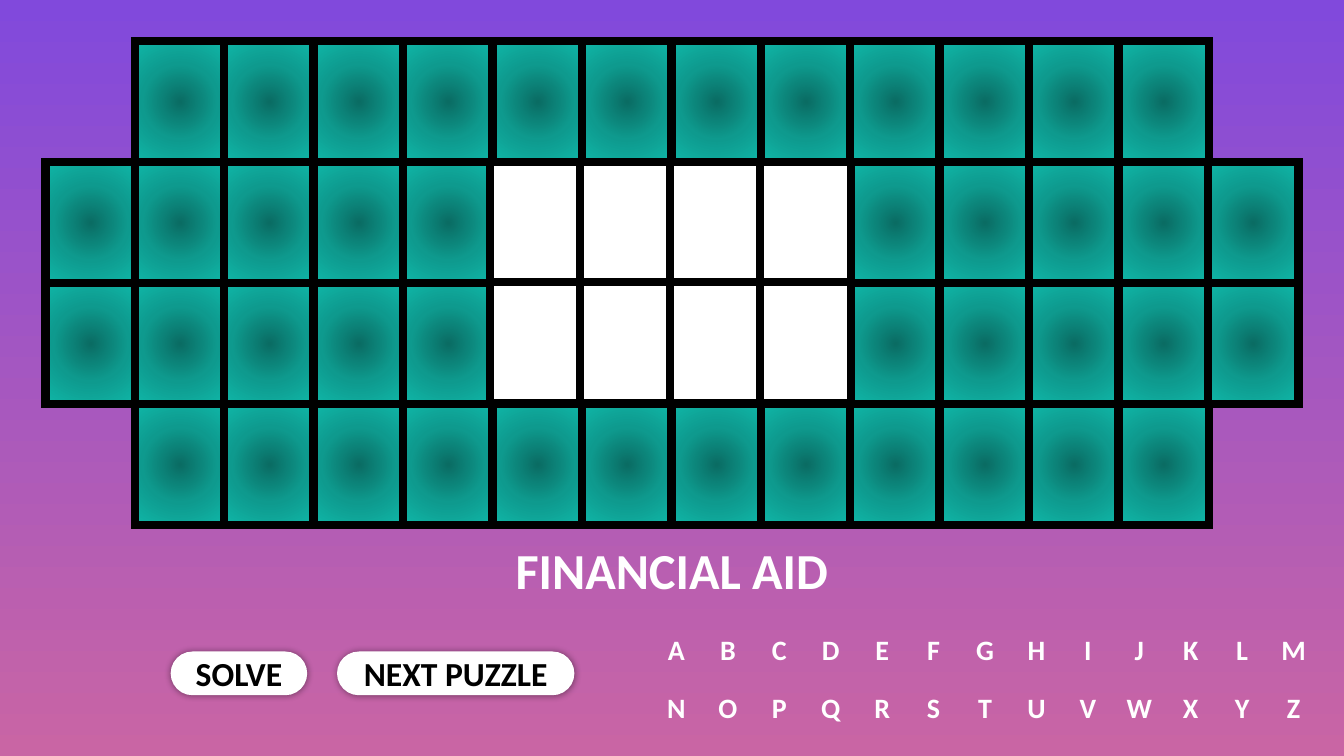
from lxml import etree
from pptx import Presentation
from pptx.dml.color import RGBColor
from pptx.enum import shapes, text
from pptx.oxml import parse_xml
from pptx.util import Inches, Pt

NS = 'xmlns:a="http://schemas.openxmlformats.org/drawingml/2006/main"'
TEAL_STOPS = ((0, "0A6C63"), (50, "0E9A8E"), (100, "10B7A8"))
TEAL_GLOW = (
    f'<a:gradFill {NS} rotWithShape="1"><a:gsLst>'
    + "".join(f'<a:gs pos="{pos * 1000}"><a:srgbClr val="{color}"/></a:gs>'
              for pos, color in TEAL_STOPS)
    + '</a:gsLst><a:path path="circle">'
    '<a:fillToRect l="50000" t="50000" r="50000" b="50000"/></a:path></a:gradFill>')
SOFT_SHADOW = (
    f'<a:outerShdw {NS} blurRad="63500" dist="0" dir="0" algn="ctr" rotWithShape="0">'
    '<a:srgbClr val="000000"><a:alpha val="40000"/></a:srgbClr></a:outerShdw>')


def rgb(color):
    return RGBColor.from_string(color)


def write(sp, words, size, color):
    """Put one centred bold line into a shape or text box, without insets."""
    tf = sp.text_frame
    frame = {"margin_left": 0, "margin_right": 0, "margin_top": 0, "margin_bottom": 0,
             "word_wrap": True, "vertical_anchor": text.MSO_ANCHOR.MIDDLE}
    for name, value in frame.items():
        setattr(tf, name, value)
    p = tf.paragraphs[0]
    p.alignment = text.PP_ALIGN.CENTER
    r = p.add_run()
    r.text = words
    for name, value in {"name": "Calibri", "size": Pt(size), "bold": True}.items():
        setattr(r.font, name, value)
    r.font.color.rgb = rgb(color)


prs = Presentation()
prs.slide_width, prs.slide_height = Inches(13.33), Inches(7.5)
slide = prs.slides.add_slide(prs.slide_layouts[6])

# Background, purple at the top to pink at the bottom
fill = slide.background.fill
fill.gradient()
fill.gradient_angle = 270
for stop, position, color in zip(fill.gradient_stops, (0, 1), ("8149DC", "C965A4")):
    stop.position = position
    stop.color.rgb = rgb(color)

# Puzzle board: the outer rows lack their end tiles, white tiles await letters
teal_tiles, white_tiles = [], []
for row in range(4):
    for col in range(14):
        if row in (0, 3) and col in (0, 13):
            continue
        if row in (1, 2) and 5 <= col <= 8:
            white_tiles.append((4.86 + 0.893 * (col - 5), 1.61 + 1.19 * (row - 1)))
        else:
            teal_tiles.append((0.45 + 0.887 * col, 0.41 + 1.2 * row))

for index, (x, y) in enumerate(teal_tiles + white_tiles):
    sp = slide.shapes.add_shape(shapes.MSO_SHAPE.RECTANGLE,
                                Inches(x), Inches(y), Inches(0.9), Inches(1.2))
    sp.shadow.inherit = False
    if index < len(teal_tiles):
        sp._element.spPr.insert(2, parse_xml(TEAL_GLOW))
    else:
        sp.fill.solid()
        sp.fill.fore_color.rgb = rgb("FFFFFF")
    sp.line.width = Pt(6)
    sp.line.color.rgb = rgb("000000")
    sp.line._get_or_add_ln().append(parse_xml(f'<a:miter {NS} lim="800000"/>'))

# Category
category = slide.shapes.add_textbox(0, Inches(5.34), prs.slide_width, Inches(0.62))
write(category, "FINANCIAL AID", 36, "FFFFFF")

# Letters to choose from
for row, letters in enumerate(("ABCDEFGHIJKLM", "NOPQRSTUVWXYZ")):
    for col, letter in enumerate(letters):
        box = slide.shapes.add_textbox(Inches(6.51 + 0.51 * col), Inches(6.13 + 0.58 * row),
                                       Inches(0.4), Inches(0.62))
        write(box, letter, 20, "FFFFFF")

# Buttons
for label, x, width in (("SOLVE", 1.7, 1.34), ("NEXT PUZZLE", 3.35, 2.34)):
    sp = slide.shapes.add_shape(shapes.MSO_SHAPE.ROUNDED_RECTANGLE,
                                Inches(x), Inches(6.47), Inches(width), Inches(0.42))
    sp.adjustments[0] = 0.5
    sp.fill.solid()
    sp.fill.fore_color.rgb = rgb("FFFFFF")
    sp.line.color.rgb = rgb("FFFFFF")
    sp.line.width = Pt(1)
    sp.shadow.inherit = False
    sp._element.spPr[-1].append(etree.fromstring(SOFT_SHADOW))
    write(sp, label, 24, "000000")

prs.save("out.pptx")
